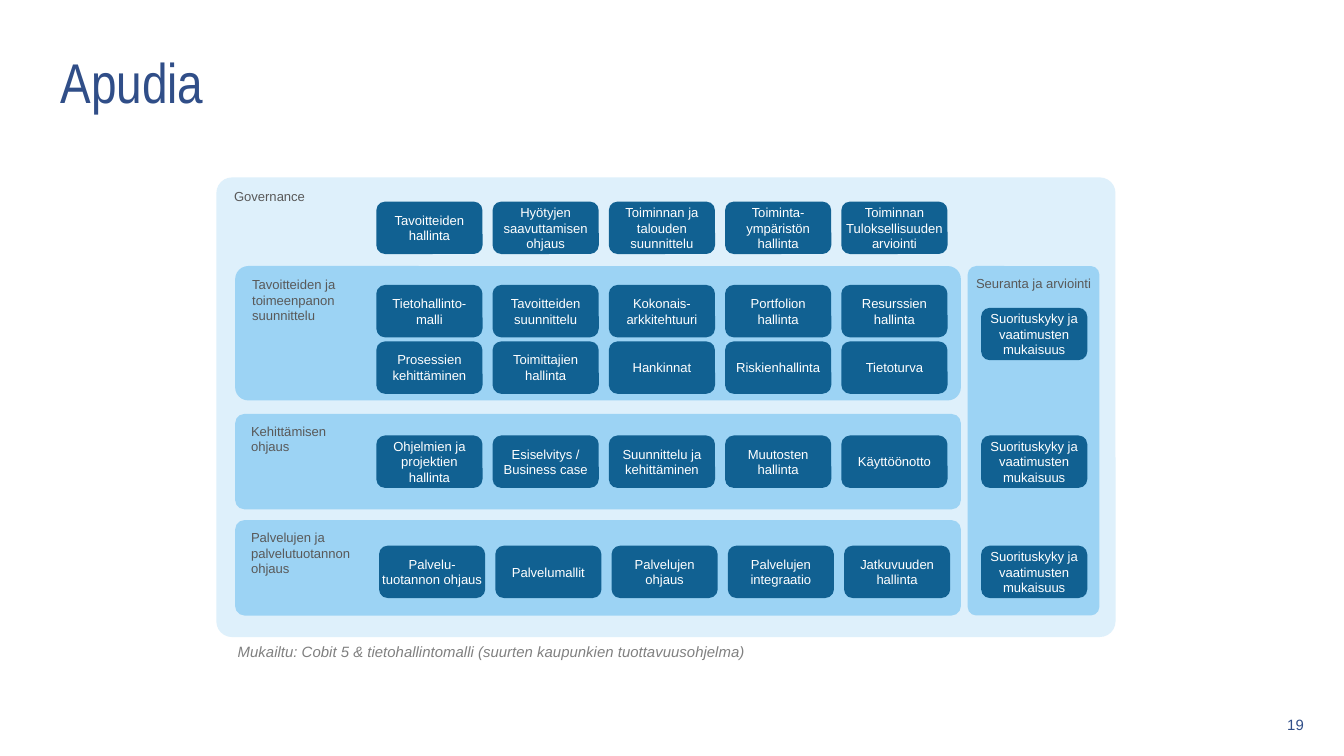
from pptx import Presentation
from pptx.dml.color import RGBColor
from pptx.enum.shapes import MSO_SHAPE as Shape
from pptx.enum.text import MSO_ANCHOR as Anchor, MSO_AUTO_SIZE as AutoSize, PP_ALIGN as Align
from pptx.util import Inches, Pt

NAVY = RGBColor(0x30, 0x4E, 0x88)
PALE_BLUE = RGBColor(0xDE, 0xF0, 0xFB)
LIGHT_BLUE = RGBColor(0x9C, 0xD3, 0xF4)
DEEP_BLUE = RGBColor(0x11, 0x61, 0x92)
WHITE = RGBColor(0xFF, 0xFF, 0xFF)
DARK_GRAY = RGBColor(0x59, 0x59, 0x59)
GRAY = RGBColor(0x80, 0x80, 0x80)

TITLE_FONT = {"name": "Arial Narrow", "size": Pt(30)}
NUMBER_FONT = {"name": "Arial", "size": Pt(8)}
LABEL_FONT = {"name": "Arial", "size": Pt(7)}
SOURCE_FONT = {"name": "Arial", "size": Pt(8), "italic": True}

SLIDE_WIDTH = 10
SLIDE_HEIGHT = SLIDE_WIDTH * 9 / 16
BOX_WIDTH, BOX_HEIGHT = 0.79, 0.39
COLUMN_STEP = (6.26 - 2.8) / 4
MONITOR_LEFT = 7.3
MONITOR_TOPS = (2.29, 3.24, 4.06)
MONITOR_TEXT = "Suorituskyky ja\nvaatimusten\nmukaisuus"

# left, top, width, height, corner, fill, alignment, label
PANELS = [
    (1.61, 1.32, 6.69, 3.42, 0.034, PALE_BLUE, Align.LEFT, "Governance"),
    (1.75, 1.98, 5.4, 1, 0.098, LIGHT_BLUE, Align.LEFT,
     "Tavoitteiden ja\ntoimeenpanon\nsuunnittelu"),
    (1.75, 3.08, 5.4, 0.71, 0.098, LIGHT_BLUE, Align.LEFT, "Kehittämisen\nohjaus"),
    (1.75, 3.87, 5.4, 0.71, 0.098, LIGHT_BLUE, Align.LEFT,
     "Palvelujen ja\npalvelutuotannon\nohjaus"),
    (7.2, 1.98, 0.98, 2.6, 0.065, LIGHT_BLUE, Align.CENTER, "Seuranta ja arviointi"),
]

# left of the first box, top, labels
PROCESS_ROWS = [
    (2.8, 1.5, ["Tavoitteiden\nhallinta", "Hyötyjen\nsaavuttamisen\nohjaus",
                "Toiminnan ja\ntalouden\nsuunnittelu", "Toiminta-\nympäristön\nhallinta",
                "Toiminnan\nTuloksellisuuden\narviointi"]),
    (2.8, 2.12, ["Tietohallinto-\nmalli", "Tavoitteiden\nsuunnittelu",
                 "Kokonais-\narkkitehtuuri", "Portfolion\nhallinta", "Resurssien\nhallinta"]),
    (2.8, 2.54, ["Prosessien\nkehittäminen", "Toimittajien\nhallinta", "Hankinnat",
                 "Riskienhallinta", "Tietoturva"]),
    (2.8, 3.24, ["Ohjelmien ja\nprojektien\nhallinta", "Esiselvitys /\nBusiness case",
                 "Suunnittelu ja\nkehittäminen", "Muutosten\nhallinta", "Käyttöönotto"]),
    (2.82, 4.06, ["Palvelu-\ntuotannon ohjaus", "Palvelumallit", "Palvelujen\nohjaus",
                  "Palvelujen\nintegraatio", "Jatkuvuuden\nhallinta"]),
]


def write_text(shape, text, font, color, align=Align.LEFT, anchor=Anchor.TOP, wrap=False):
    """Fill a shape with one paragraph for each line of text."""
    frame = shape.text_frame
    frame.text = text
    frame_format = {"word_wrap": wrap, "auto_size": AutoSize.NONE, "vertical_anchor": anchor}
    for name, value in frame_format.items():
        setattr(frame, name, value)
    for paragraph in frame.paragraphs:
        paragraph.alignment = align
        for name, value in font.items():
            setattr(paragraph.font, name, value)
        paragraph.font.color.rgb = color


def add_title(slide, text):
    title = slide.shapes.title
    placement = {"left": 0.35, "top": 0.12, "width": 9.25, "height": 0.97}
    for name, value in placement.items():
        setattr(title, name, Inches(value))
    write_text(title, text, TITLE_FONT, NAVY, anchor=Anchor.MIDDLE, wrap=True)


def add_text_box(shapes, left, top, width, height, text, font, color, **layout):
    box = shapes.add_textbox(Inches(left), Inches(top), Inches(width), Inches(height))
    write_text(box, text, font, color, **layout)


def add_rounded(shapes, left, top, width, height, fill):
    shape = shapes.add_shape(Shape.ROUNDED_RECTANGLE, Inches(left), Inches(top),
                             Inches(width), Inches(height))
    shape.shadow.inherit = False
    shape.fill.solid()
    shape.fill.fore_color.rgb = fill
    shape.line.fill.background()
    return shape


def add_panel(shapes, left, top, width, height, corner, fill, align, label):
    panel = add_rounded(shapes, left, top, width, height, fill)
    panel.adjustments[0] = corner
    write_text(panel, label, LABEL_FONT, DARK_GRAY, align)


def add_process(shapes, left, top, label):
    box = add_rounded(shapes, left, top, BOX_WIDTH, BOX_HEIGHT, DEEP_BLUE)
    write_text(box, label, LABEL_FONT, WHITE, Align.CENTER, Anchor.MIDDLE)


def main():
    presentation = Presentation()
    presentation.slide_width = Inches(SLIDE_WIDTH)
    presentation.slide_height = Inches(SLIDE_HEIGHT)
    slide = presentation.slides.add_slide(presentation.slide_layouts[5])

    add_title(slide, "Apudia")
    add_text_box(slide.shapes, 9.28, 5.27, 0.52, 0.24, "19", NUMBER_FONT, NAVY,
                 align=Align.RIGHT, anchor=Anchor.MIDDLE, wrap=True)

    diagram = slide.shapes.add_group_shape().shapes
    for panel in PANELS:
        add_panel(diagram, *panel)
    for left, top, labels in PROCESS_ROWS:
        for column, label in enumerate(labels):
            add_process(diagram, left + column * COLUMN_STEP, top, label)
    for top in MONITOR_TOPS:
        add_process(diagram, MONITOR_LEFT, top, MONITOR_TEXT)
    add_text_box(diagram, 1.67, 4.73, 4.02, 0.24,
                 "Mukailtu: Cobit 5 & tietohallintomalli (suurten kaupunkien tuottavuusohjelma)",
                 SOURCE_FONT, GRAY)

    presentation.save("out.pptx")


if __name__ == "__main__":
    main()
